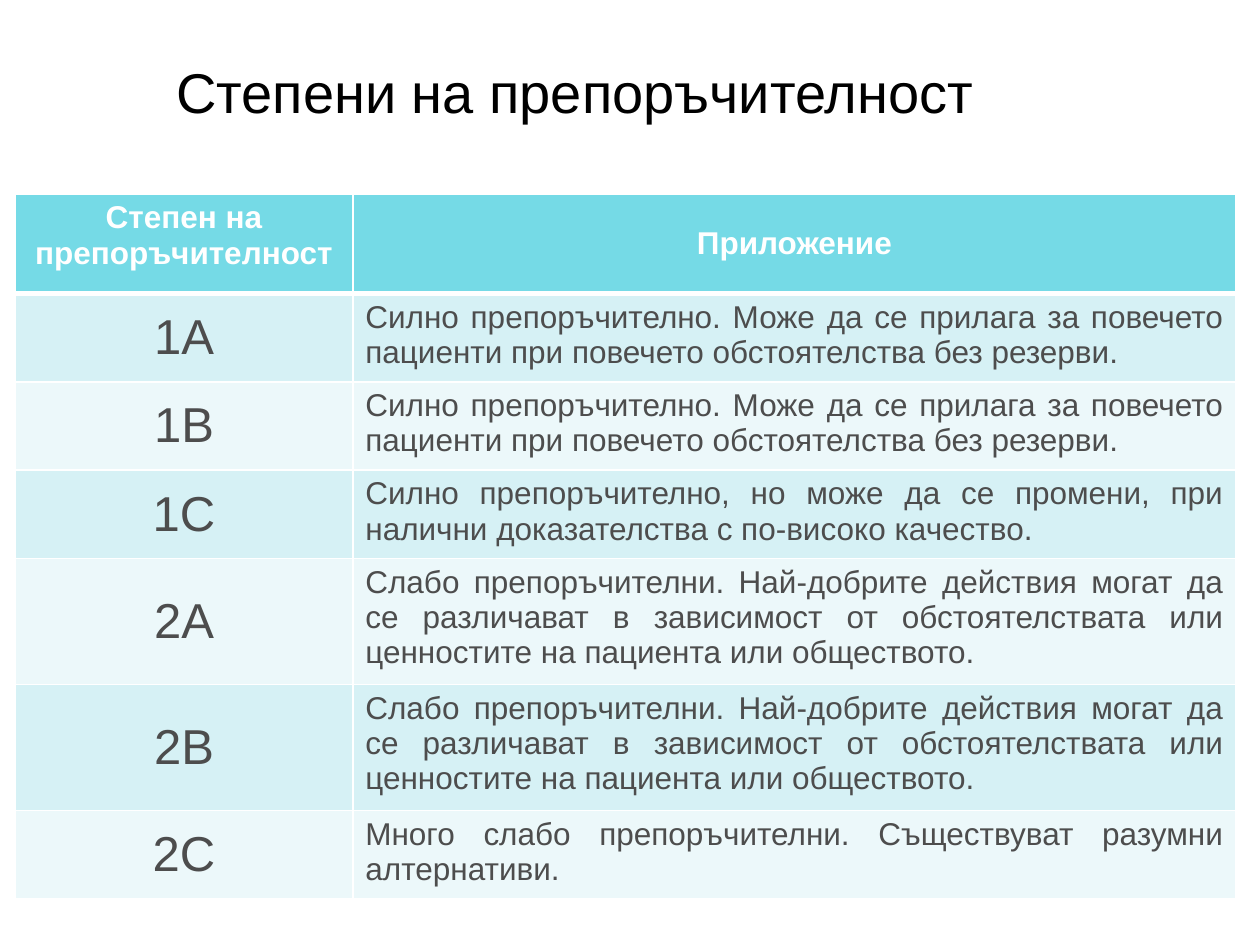
from lxml import etree
from pptx import Presentation, util as u
from pptx.dml.color import RGBColor
from pptx.enum import text as t
from pptx.oxml.ns import qn

HUES = {"ink": "000000", "body": "4D4D4D", "white": "FFFFFF",
        "head": "75DAE6", "dark": "D6F1F5", "light": "ECF8FA"}
LEFT, MID, JUST = t.PP_ALIGN.LEFT, t.PP_ALIGN.CENTER, t.PP_ALIGN.JUSTIFY

STRONG = ("Силно препоръчително. Може да се прилага за повечето пациенти "
          "при повечето обстоятелства без резерви.")
WEAK = ("Слабо препоръчителни. Най-добрите действия могат да се различават "
        "в зависимост от обстоятелствата или ценностите на пациента или "
        "обществото.")
GRADES = [
    ("1А", STRONG),
    ("1В", STRONG),
    ("1С", "Силно препоръчително, но може да се промени, при налични "
           "доказателства с по-високо качество."),
    ("2А", WEAK),
    ("2В", WEAK),
    ("2С", "Много слабо препоръчителни. Съществуват разумни алтернативи."),
]


def write(frame, words, size=18, hue="body", bold=False, align=LEFT):
    para = frame.paragraphs[0]
    para.alignment = align
    run = para.add_run()
    run.text = words
    font = run.font
    font.name, font.size, font.bold = "Arial", u.Pt(size), bold
    font.color.rgb = RGBColor.from_string(HUES[hue])


def edge(cell, base=1):
    """White cell borders, with the bottom one in its own width."""
    props = cell._tc.get_or_add_tcPr()
    for spot, (side, width) in enumerate(
            {"lnL": 1, "lnR": 1, "lnT": 1, "lnB": base}.items()):
        line = etree.Element(qn(f"a:{side}"), w=str(u.Pt(width)))
        fill = etree.SubElement(line, qn("a:solidFill"))
        etree.SubElement(fill, qn("a:srgbClr"), val=HUES["white"])
        props.insert(spot, line)


class Deck:
    def __init__(self):
        self.prs = Presentation()
        self.prs.slide_width, self.prs.slide_height = u.Inches(10), u.Inches(7.5)
        self.slide = self.prs.slides.add_slide(self.prs.slide_layouts[6])

    def title(self, words, *box):
        frame = self.slide.shapes.add_textbox(*map(u.Inches, box)).text_frame
        frame.word_wrap = True
        frame.vertical_anchor = t.MSO_ANCHOR.MIDDLE
        write(frame, words, size=32, hue="ink")

    def table(self, left, top, cols, rows):
        box = [u.Inches(n) for n in (left, top, sum(cols), sum(rows))]
        grid = self.slide.shapes.add_table(len(rows), len(cols), *box).table
        for col, width in zip(grid.columns, cols):
            col.width = u.Inches(width)
        for row, height in zip(grid.rows, rows):
            row.height = u.Inches(height)
        return grid

    def cell(self, cell, words, fill, base=1, mid=True, **style):
        cell.fill.solid()
        cell.fill.fore_color.rgb = RGBColor.from_string(HUES[fill])
        cell.vertical_anchor = t.MSO_ANCHOR.MIDDLE if mid else t.MSO_ANCHOR.TOP
        edge(cell, base)
        write(cell.text_frame, words, **style)


def main():
    deck = Deck()
    deck.title("Степени на препоръчителност", 1.3, 0.44, 8.43, 0.56)
    grid = deck.table(0.12, 1.54, [2.68, 7.01], [0.79] + [0.7] * len(GRADES))

    # Header row
    heads = ["Степен на препоръчителност", "Приложение"]
    for col, words in enumerate(heads):
        deck.cell(grid.cell(0, col), words, "head", base=3, mid=col > 0,
                  hue="white", bold=True, align=MID)

    # Grades in alternating bands
    for row, (grade, use) in enumerate(GRADES, 1):
        fill = "dark" if row % 2 else "light"
        deck.cell(grid.cell(row, 0), grade, fill, size=28, align=MID)
        deck.cell(grid.cell(row, 1), use, fill, mid=False, align=JUST)

    deck.prs.save("out.pptx")


if __name__ == "__main__":
    main()
